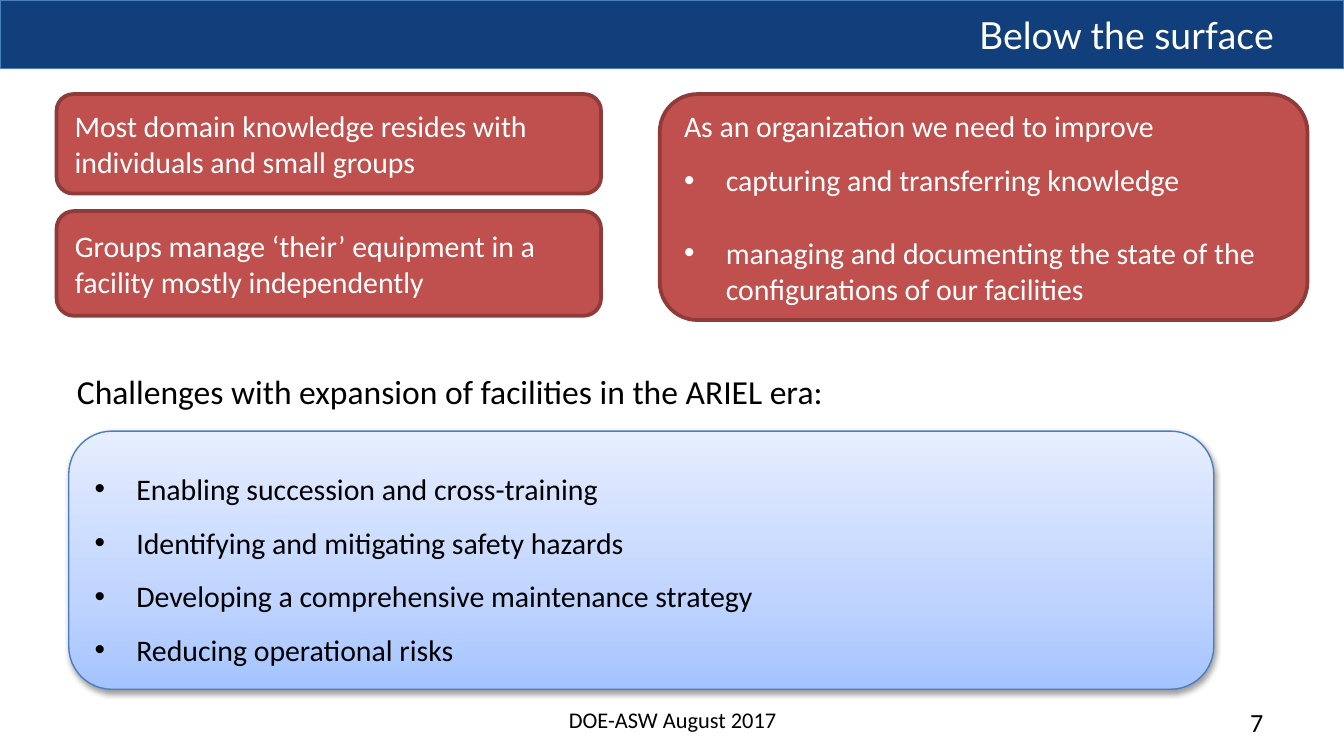
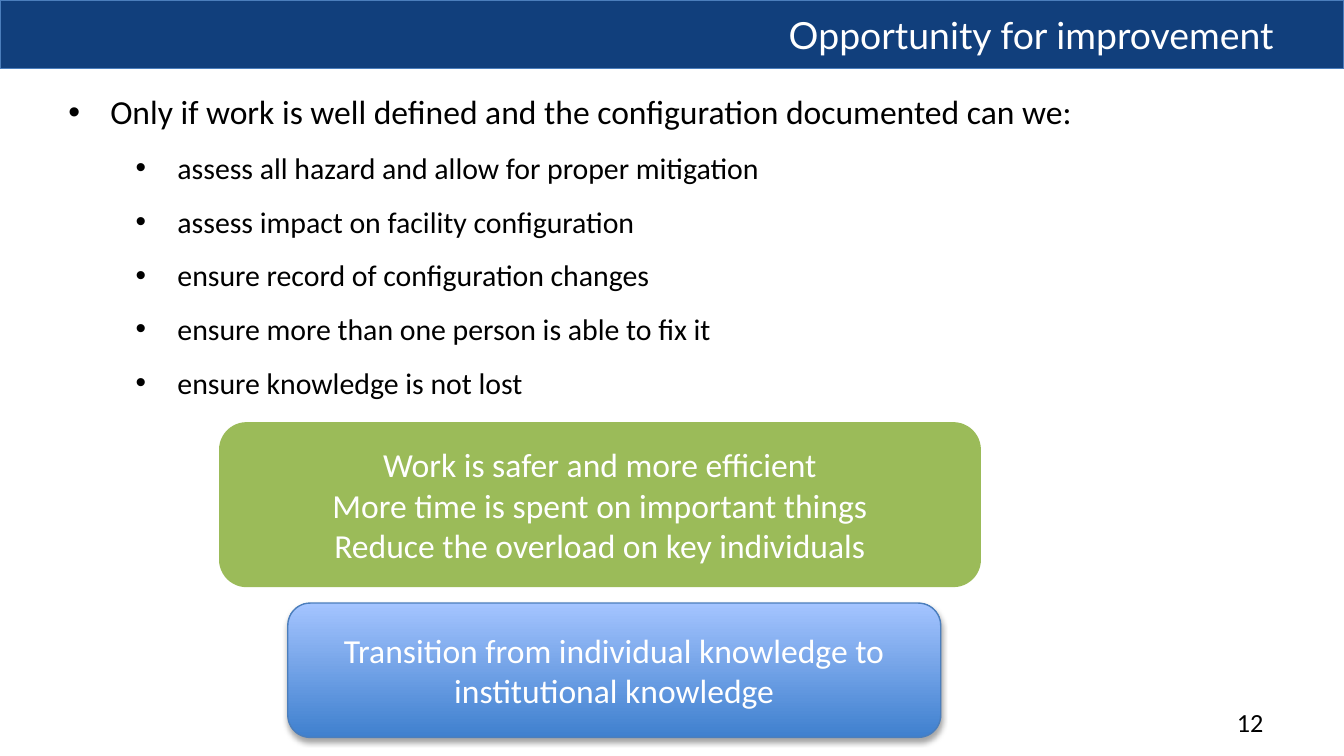
from lxml.etree import SubElement
from pptx import Presentation
from pptx.dml.color import RGBColor
from pptx.enum.shapes import MSO_SHAPE as Preset
from pptx.enum.text import MSO_ANCHOR as Anchor, MSO_AUTO_SIZE as AutoSize, PP_ALIGN as Align
from pptx.oxml.ns import qn
from pptx.util import Cm, Pt

NAVY, EDGE = "113F7C", "4B7EBC"
RED, DARK_RED, GREEN = "C0504D", "8E3B39", "9BBB59"
WHITE, BLACK = "FFFFFF", "000000"
PALE_BLUE = [(0, "A4C4FF"), (35, "BFD4FF"), (100, "E6EEFF")]
STRONG_BLUE = [(0, "3F80CE"), (100, "A4C4FF")]
TITLE_ONLY, TITLE_AND_LIST = 5, 1
HANGING = 0.79


def color(value):
    return RGBColor.from_string(value)


def item(text, left=HANGING, **paragraph_format):
    """A bulleted paragraph: text, left indent in cm, paragraph format."""
    return text, left, paragraph_format


class Deck:
    def __init__(self):
        self.prs = Presentation()
        self.prs.slide_width, self.prs.slide_height = Cm(25.4), Cm(14.29)
        self.slide = None
        self.has_band = False

    def new_slide(self, layout, heading, number):
        self.slide = self.prs.slides.add_slide(self.prs.slide_layouts[layout])
        if not self.has_band:
            self.master_band()
        title = self.place(self.slide.shapes.title, (7.34, 0, 16.99, 1.3))
        self.fill_text(title, [heading], size=20, ink=WHITE, font="Lato",
                       align=Align.RIGHT, anchor=Anchor.MIDDLE)
        self.label(str(number), (18.21, 13.23, 5.92, 0.76), size=14, align=Align.RIGHT)

    def master_band(self):
        band = self.box((0, 0, 25.4, 1.3), NAVY, EDGE, preset=Preset.RECTANGLE)
        band.element.xpath("./p:nvSpPr/p:cNvPr")[0].set("id", "99")
        self.prs.slide_master.shapes.element.insert(2, band.element)
        self.has_band = True

    def place(self, shape, at):
        for name, value in zip(("left", "top", "width", "height"), at):
            setattr(shape, name, Cm(value))
        return shape

    def box(self, at, fill, edge=None, edge_width=0.75, preset=Preset.ROUNDED_RECTANGLE):
        box = self.slide.shapes.add_shape(preset, *map(Cm, at))
        box.shadow.inherit = False
        if isinstance(fill, list):
            self.gradient(box, fill)
        else:
            box.fill.solid()
            box.fill.fore_color.rgb = color(fill)
        if edge:
            box.line.color.rgb = color(edge)
            box.line.width = Pt(edge_width)
        else:
            box.line.fill.background()
        return box

    def gradient(self, box, stops):
        box.fill.gradient()
        box.fill.gradient_angle = 90
        stop_list = box.element.spPr.find(qn("a:gradFill")).find(qn("a:gsLst"))
        for stop in list(stop_list):
            stop_list.remove(stop)
        for position, value in stops:
            stop = SubElement(stop_list, qn("a:gs"), pos=str(position * 1000))
            SubElement(stop, qn("a:srgbClr"), val=value)

    def drop_shadow(self, box, opacity, distance):
        effects = box.element.spPr.find(qn("a:effectLst"))
        shadow = SubElement(effects, qn("a:outerShdw"), blurRad="40000",
                            dist=str(Pt(distance)), dir="5400000", rotWithShape="0")
        ink = SubElement(shadow, qn("a:srgbClr"), val=BLACK)
        SubElement(ink, qn("a:alpha"), val=str(opacity * 1000))

    def label(self, text, at, wrap=True, **style):
        label = self.slide.shapes.add_textbox(*map(Cm, at))
        self.fill_text(label, [text], wrap=wrap, **style)

    def body_list(self, at, items, **style):
        body = self.place(self.slide.placeholders[1], at)
        self.fill_text(body, items, **style)

    def fill_text(self, shape, lines, size=16, ink=BLACK, font="Calibri",
                  align=Align.LEFT, anchor=Anchor.TOP, wrap=True):
        frame = shape.text_frame
        frame_format = {"word_wrap": wrap, "vertical_anchor": anchor,
                        "auto_size": AutoSize.NONE if wrap else AutoSize.SHAPE_TO_FIT_TEXT}
        for name, value in frame_format.items():
            setattr(frame, name, value)
        for index, line in enumerate(lines):
            paragraph = frame.add_paragraph() if index else frame.paragraphs[0]
            paragraph_format = {"alignment": align, "space_before": Pt(0)}
            font_format = {"name": font, "size": Pt(size)}
            text = line
            if isinstance(line, tuple):
                text, left, extra = line
                self.bullet(paragraph, left)
                paragraph_format.update(extra)
                font_format["size"] = paragraph_format.pop("size", Pt(size))
            for name, value in paragraph_format.items():
                setattr(paragraph, name, value)
            run = paragraph.add_run()
            run.text = text
            for name, value in font_format.items():
                setattr(run.font, name, value)
            run.font.color.rgb = color(ink)

    def bullet(self, paragraph, left):
        properties = paragraph._p.get_or_add_pPr()
        properties.set("marL", str(Cm(left)))
        properties.set("indent", str(-Cm(HANGING)))
        SubElement(properties, qn("a:buFont"), typeface="Arial")
        SubElement(properties, qn("a:buChar"), char="•")


def below_the_surface(deck):
    deck.new_slide(TITLE_ONLY, "Below the surface", 7)

    # Present situation and needs
    findings = [
        ((1.07, 1.78, 10.29, 1.88),
         ["Most domain knowledge resides with individuals and small groups"]),
        ((12.47, 1.78, 12.24, 4.27),
         ["As an organization we need to improve",
          item("capturing and transferring knowledge", space_before=Pt(9.75)),
          item("managing and documenting the state of the configurations of our facilities",
               space_before=Pt(19.5))]),
        ((1.07, 3.99, 10.29, 1.98),
         ["Groups manage ‘their’ equipment in a facility mostly independently"]),
    ]
    for at, lines in findings:
        finding = deck.box(at, RED, DARK_RED, 2)
        deck.fill_text(finding, lines, ink=WHITE, anchor=Anchor.MIDDLE)

    # Challenges
    challenges = deck.box((1.3, 8.15, 21.64, 4.88), PALE_BLUE, EDGE)
    deck.drop_shadow(challenges, 38, 1.6)
    deck.fill_text(challenges, [item(text, line_spacing=1.5) for text in (
        "Enabling succession and cross-training",
        "Identifying and mitigating safety hazards",
        "Developing a comprehensive maintenance strategy",
        "Reducing operational risks")], anchor=Anchor.MIDDLE)
    deck.label("Challenges with expansion of facilities in the ARIEL era:",
               (1.07, 6.88, 14.88, 1.02), wrap=False, size=18, align=Align.CENTER)

    # Footer
    deck.label("DOE-ASW August 2017", (8.69, 13.23, 8.05, 0.76),
               size=12, align=Align.CENTER)


def opportunity_for_improvement(deck):
    deck.new_slide(TITLE_AND_LIST, "Opportunity for improvement", 12)

    # Conditions
    abilities = [
        "assess all hazard and allow for proper mitigation",
        "assess impact on facility configuration",
        "ensure record of configuration changes",
        "ensure more than one person is able to fix it",
        "ensure knowledge is not lost",
    ]
    deck.body_list((1.04, 1.6, 23.04, 9.25), [
        item("Only if work is well defined and the configuration documented can we:",
             size=Pt(18)),
        *(item(text, 2.06, level=1, line_spacing=1.5) for text in abilities)])

    # Outcomes
    benefits = deck.box((4.14, 7.98, 14.4, 3.12), GREEN)
    transition = deck.box((5.44, 11.4, 12.34, 2.54), STRONG_BLUE, EDGE)
    deck.drop_shadow(transition, 35, 1.8)
    outcomes = [
        (benefits, ["Work is safer and more efficient",
                    "More time is spent on important things",
                    "Reduce the overload on key individuals"]),
        (transition, ["Transition from individual knowledge to institutional knowledge"]),
    ]
    for outcome, lines in outcomes:
        deck.fill_text(outcome, lines, size=18, ink=WHITE,
                       align=Align.CENTER, anchor=Anchor.MIDDLE)


def main():
    deck = Deck()
    below_the_surface(deck)
    opportunity_for_improvement(deck)
    deck.prs.save("out.pptx")


if __name__ == "__main__":
    main()
